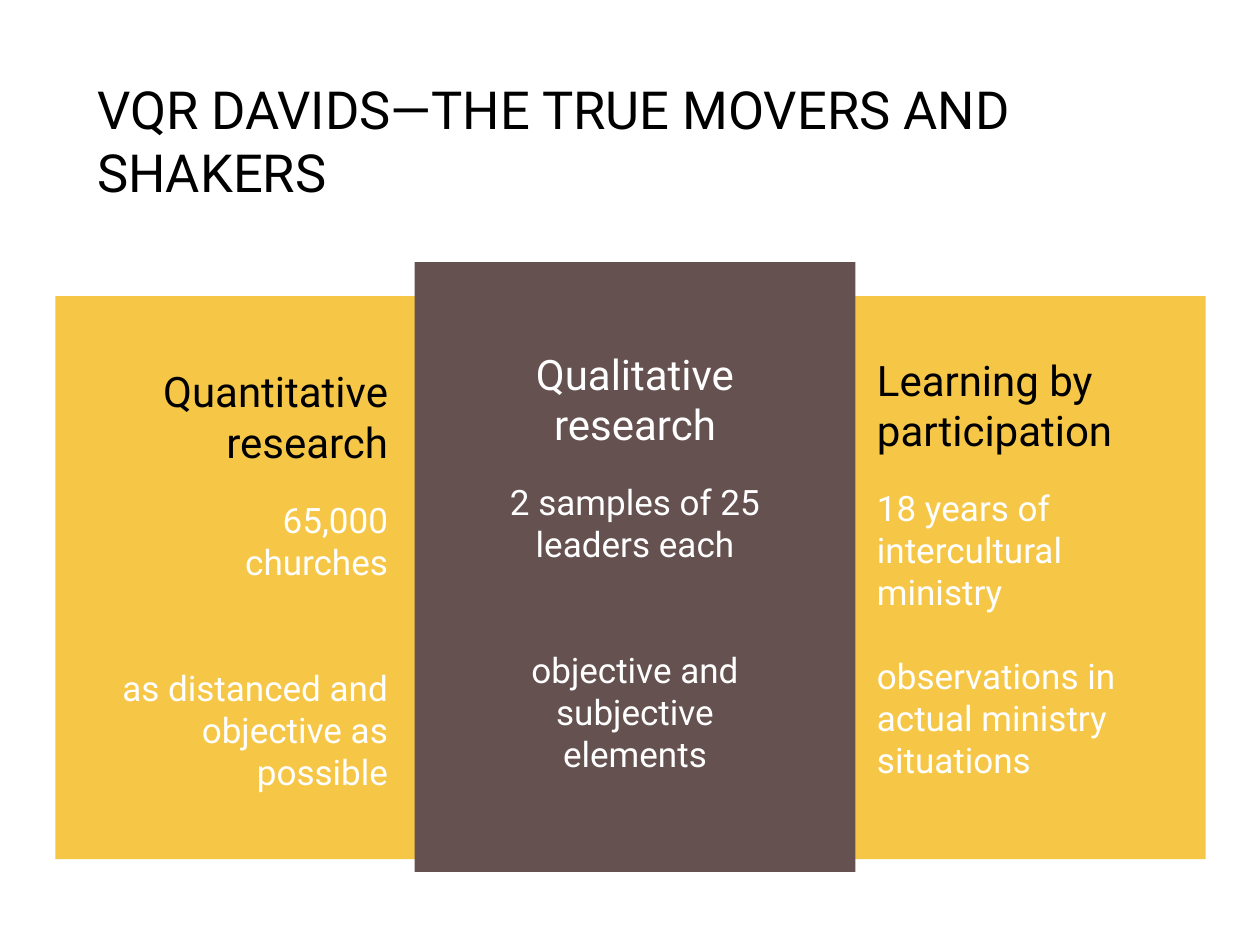
from dataclasses import dataclass

from pptx import Presentation
from pptx.dml.color import RGBColor
from pptx.enum.shapes import MSO_SHAPE
from pptx.enum.text import MSO_ANCHOR, PP_ALIGN
from pptx.util import Inches, Pt

FONT = "Roboto"
COLORS = {"yellow": "F6C646", "brown": "655250", "black": "000000", "white": "FFFFFF"}
TEXT_SIZE = (2.28, 3.51)
HEAD_GAP = 18
LINE_GAP = 24


@dataclass
class Line:
    text: str
    gap: float = 0


@dataclass
class Panel:
    box: tuple[float, float, float, float]
    fill: str
    spot: tuple[float, float]
    align: PP_ALIGN
    title: str
    ink: str
    body: list[Line]


PANELS = [
    Panel((6.47, 2.35, 3.1, 4.47), "yellow", (6.96, 2.75), PP_ALIGN.LEFT,
          "Learning by participation", "black",
          [Line("18 years of intercultural ministry", HEAD_GAP),
           Line("observations in actual ministry situations", LINE_GAP)]),
    Panel((0.44, 2.35, 3.1, 4.47), "yellow", (0.8, 2.84), PP_ALIGN.RIGHT,
          "Quantitative research", "black",
          [Line("65,000", HEAD_GAP),
           Line("churches"),
           Line("as distanced and objective as possible", 2 * LINE_GAP)]),
    Panel((3.29, 2.08, 3.5, 4.84), "brown", (3.9, 2.7), PP_ALIGN.CENTER,
          "Qualitative research", "white",
          [Line("2 samples of 25 leaders each", HEAD_GAP),
           Line("objective and subjective elements", 2 * LINE_GAP)]),
]


def paint(name: str) -> RGBColor:
    return RGBColor.from_string(COLORS[name])


def style(para, text: str, size: float, ink: str, align: PP_ALIGN, gap: float = 0) -> None:
    para.text = text
    para.alignment = align
    para.space_before = Pt(gap)
    para.font.name = FONT
    para.font.size = Pt(size)
    para.font.color.rgb = paint(ink)


def setup(frame, inset: float) -> None:
    frame.word_wrap = True
    frame.vertical_anchor = MSO_ANCHOR.MIDDLE
    frame.margin_left = frame.margin_right = Inches(inset)
    frame.margin_top = frame.margin_bottom = Inches(inset)


def draw_title(slide, text: str) -> None:
    title = slide.shapes.title
    title.left, title.top = Inches(0.72), Inches(0.52)
    title.width, title.height = Inches(8.41), Inches(1.19)
    setup(title.text_frame, 0.05)
    style(title.text_frame.paragraphs[0], text, 30, "black", PP_ALIGN.LEFT)


def draw_panel(slide, panel: Panel) -> None:
    shape = slide.shapes.add_shape(MSO_SHAPE.RECTANGLE, *map(Inches, panel.box))
    shape.shadow.inherit = False
    shape.fill.solid()
    shape.fill.fore_color.rgb = paint(panel.fill)
    shape.line.fill.background()

    frame = slide.shapes.add_textbox(*map(Inches, panel.spot + TEXT_SIZE)).text_frame
    setup(frame, 0)
    style(frame.paragraphs[0], panel.title, 24, panel.ink, panel.align)
    for line in panel.body:
        style(frame.add_paragraph(), line.text, 20, "white", panel.align, line.gap)


def main() -> None:
    deck = Presentation()
    deck.slide_width, deck.slide_height = Inches(10), Inches(7.5)
    slide = deck.slides.add_slide(deck.slide_layouts[5])
    draw_title(slide, "VQR DAVIDS—THE TRUE MOVERS AND SHAKERS")
    for panel in PANELS:
        draw_panel(slide, panel)
    deck.save("out.pptx")


if __name__ == "__main__":
    main()
